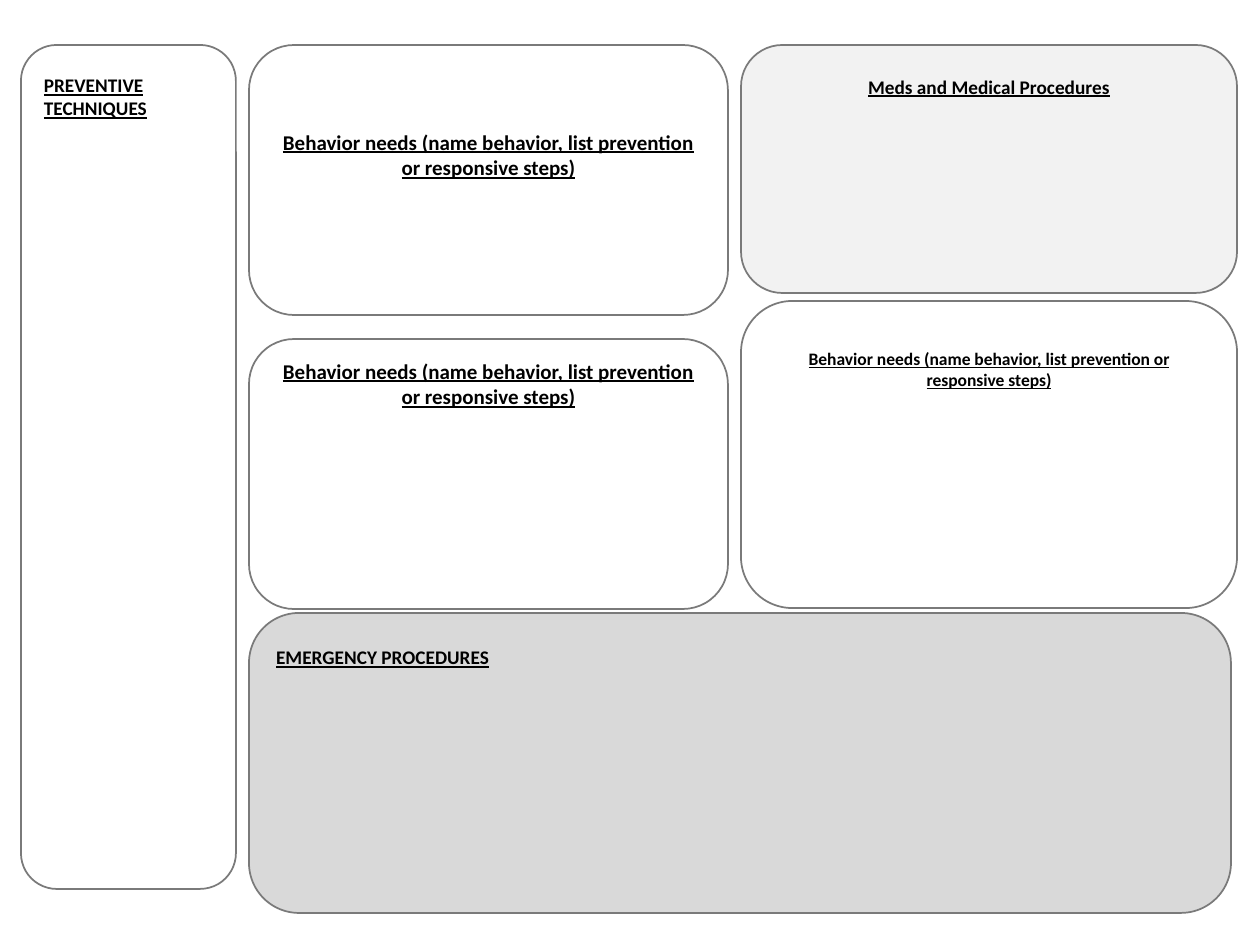
from pptx import Presentation
from pptx.dml.color import RGBColor
from pptx.enum.shapes import MSO_SHAPE
from pptx.enum.text import MSO_ANCHOR, PP_ALIGN
from pptx.util import Pt

COLORS = {
    "white": "FFFFFF",
    "light": "F2F2F2",
    "grey": "D9D9D9",
    "outline": "7A7A7A",
    "text": "000000",
}
EMU_PER_PX = 914400 / 126
BEHAVIOR = "Behavior needs (name behavior, list prevention or responsive steps)"


def px(length):
    return round(length * EMU_PER_PX)


def color(name):
    return RGBColor.from_string(COLORS[name])


class CarePlan:
    heading_format = {"name": "Calibri", "bold": True, "underline": True}

    def __init__(self, width, height):
        self.deck = Presentation()
        self.deck.slide_width, self.deck.slide_height = px(width), px(height)
        self.slide = self.deck.slides.add_slide(self.deck.slide_layouts[6])

    def panel(self, box, heading, size, drop, fill="white", align=PP_ALIGN.CENTER):
        """Rounded panel whose heading starts `drop` px below its text area's top."""
        panel = self.slide.shapes.add_shape(
            MSO_SHAPE.ROUNDED_RECTANGLE, *(px(side) for side in box))
        panel.shadow.inherit = False
        panel.fill.solid()
        panel.fill.fore_color.rgb = color(fill)
        panel.line.color.rgb = color("outline")
        panel.line.width = Pt(1)

        frame = panel.text_frame
        frame_format = {"word_wrap": True, "vertical_anchor": MSO_ANCHOR.TOP,
                        "margin_top": px(drop)}
        for name, value in frame_format.items():
            setattr(frame, name, value)

        paragraph = frame.paragraphs[0]
        paragraph.alignment = align
        run = paragraph.add_run()
        run.text = heading
        for name, value in {**self.heading_format, "size": Pt(size)}.items():
            setattr(run.font, name, value)
        run.font.color.rgb = color("text")

    def save(self):
        self.deck.save("out.pptx")


def main():
    plan = CarePlan(1260, 945)
    top = 45
    side_left, middle_left, right_left = 21, 249, 741
    middle_width, right_width = 479, 496
    behavior_height = 270

    # Side column
    plan.panel((side_left, top, 215, 844), "PREVENTIVE TECHNIQUES", 11, 18,
               align=PP_ALIGN.LEFT)

    # Middle column: two equal behavior panels
    for behavior_top, drop in ((top, 71), (339, 6)):
        plan.panel((middle_left, behavior_top, middle_width, behavior_height),
                   BEHAVIOR, 12, drop)

    # Right column
    plan.panel((right_left, top, right_width, 248),
               "Meds and Medical Procedures", 11, 18, fill="light")
    plan.panel((right_left, 301, right_width, 307), BEHAVIOR, 10, 32)

    # Bottom band
    plan.panel((middle_left, 613, 982, 300), "EMERGENCY PROCEDURES", 11, 18,
               fill="grey", align=PP_ALIGN.LEFT)

    plan.save()


if __name__ == "__main__":
    main()
